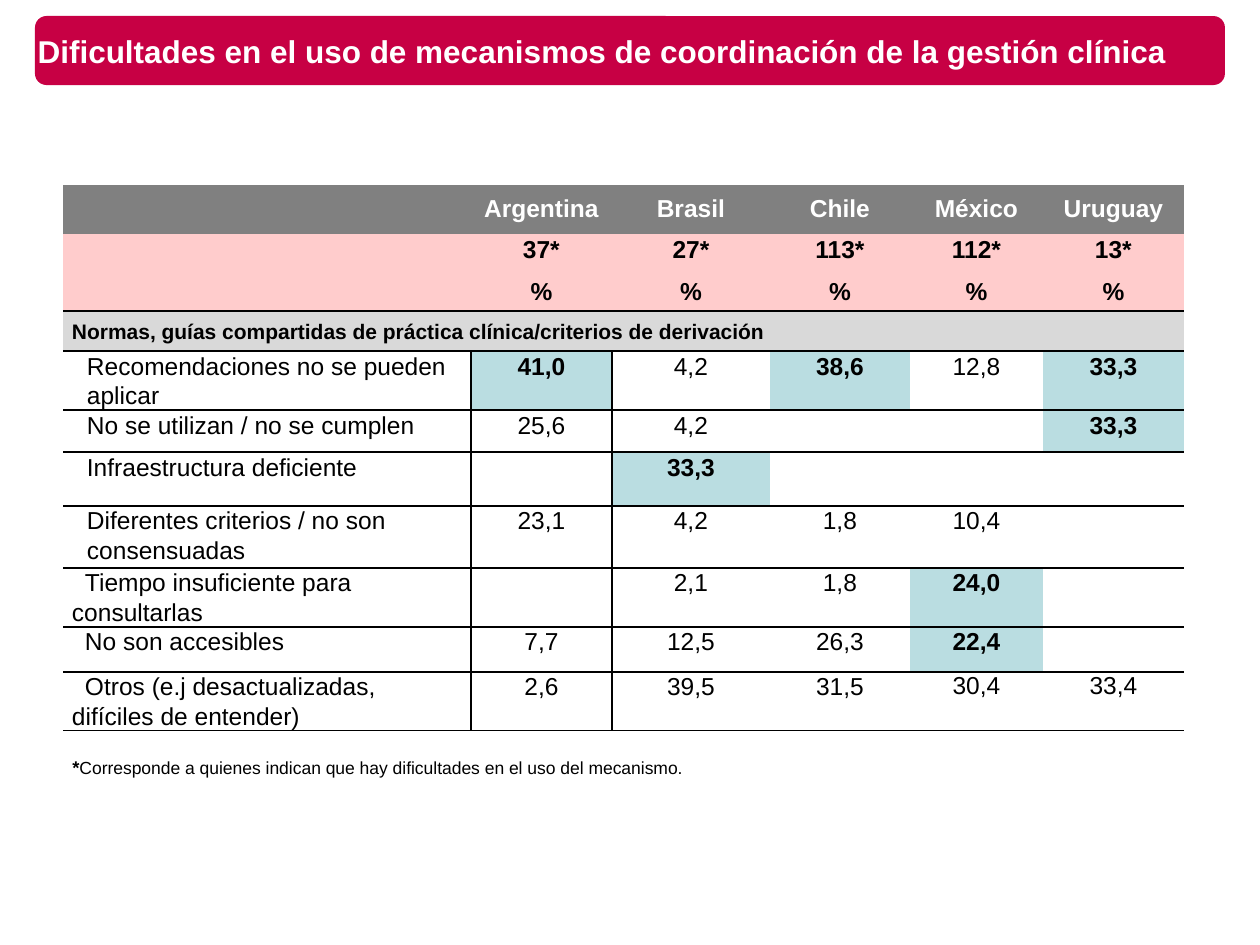
import pptx
import pptx.util
import pptx.dml.color
import pptx.enum.shapes
import pptx.enum.text
import pptx.oxml.ns
import lxml.etree

SCALE = 914400 // 126
BLACK, WHITE = "000000", "FFFFFF"
GRAY, PINK, SILVER, TEAL = "808080", "FFCCCC", "D9D9D9", "BADDE1"
LEFT = pptx.enum.text.PP_ALIGN.LEFT
CENTER = pptx.enum.text.PP_ALIGN.CENTER
TOP = pptx.enum.text.MSO_ANCHOR.TOP
MIDDLE = pptx.enum.text.MSO_ANCHOR.MIDDLE
PLAIN_STYLE = "{2D5ABB26-0587-4C30-8999-92F81FD0307C}"

COLUMN_WIDTHS = [408, 141, 158, 140, 133, 141]
ROW_HEIGHTS = [49, 38, 38, 40, 59, 42, 54, 62, 59, 45, 59]
COUNTRIES = ["", "Argentina", "Brasil", "Chile", "México", "Uruguay"]
COUNTS = ["", "37*", "27*", "113*", "112*", "13*"]
UNITS = [""] + ["%"] * 5
SECTION = "Normas, guías compartidas de práctica clínica/criterios de derivación"
HANGING, FIRST_LINE = (15, 0), (0, 13)
DIFFICULTIES = [
    ("Recomendaciones no se pueden aplicar", HANGING, ["41,0", "4,2", "38,6", "12,8", "33,3"]),
    ("No se utilizan / no se cumplen", HANGING, ["25,6", "4,2", "", "", "33,3"]),
    ("Infraestructura deficiente", HANGING, ["", "33,3", "", "", ""]),
    ("Diferentes criterios / no son consensuadas", HANGING, ["23,1", "4,2", "1,8", "10,4", ""]),
    ("Tiempo insuficiente para consultarlas", FIRST_LINE, ["", "2,1", "1,8", "24,0", ""]),
    ("No son accesibles", FIRST_LINE, ["7,7", "12,5", "26,3", "22,4", ""]),
    ("Otros (e.j desactualizadas,\vdifíciles de entender)", FIRST_LINE,
     ["2,6", "39,5", "31,5", "30,4", "33,4"]),
]
HIGHLIGHTS = {(0, 0), (0, 2), (0, 4), (1, 4), (2, 1), (4, 3), (5, 3)}
SINGLE_SPACED = {(6, 3), (6, 4)}


def px(length):
    return pptx.util.Emu(length * SCALE)


def color(value):
    return pptx.dml.color.RGBColor.from_string(value)


def write(para, text, size=14, bold=False, ink=BLACK, align=LEFT, spacing=1.0, indent=(0, 0)):
    para.text = text
    para.alignment = align
    para.line_spacing = spacing
    properties = para._p.get_or_add_pPr()
    properties.set("marL", str(px(indent[0])))
    properties.set("indent", str(px(indent[1])))
    for span in para.runs:
        span.font.name = "Arial"
        span.font.size = pptx.util.Pt(size)
        span.font.bold = bold
        span.font.color.rgb = color(ink)


def add_border(cell, side):
    line = lxml.etree.SubElement(
        cell._tc.get_or_add_tcPr(), pptx.oxml.ns.qn("a:" + side), w=str(pptx.util.Pt(1)))
    solid = lxml.etree.SubElement(line, pptx.oxml.ns.qn("a:solidFill"))
    lxml.etree.SubElement(solid, pptx.oxml.ns.qn("a:srgbClr"), val=BLACK)


def fill_cell(cell, text, fill=WHITE, anchor=TOP, borders=(), **style):
    cell.margin_left = cell.margin_right = px(9)
    cell.margin_top = cell.margin_bottom = 0
    cell.vertical_anchor = anchor
    for side in borders:
        add_border(cell, side)
    cell.fill.solid()
    cell.fill.fore_color.rgb = color(fill)
    write(cell.text_frame.paragraphs[0], text, **style)


def add_heading(page, left, top, width, height):
    bar = page.shapes.add_shape(
        pptx.enum.shapes.MSO_SHAPE.ROUNDED_RECTANGLE, px(left), px(top), px(width), px(height))
    bar.shadow.inherit = False
    bar.fill.solid()
    bar.fill.fore_color.rgb = color("C70044")
    bar.line.fill.background()

    title = page.shapes.title
    title.element.getparent().append(title.element)
    title.left, title.top = px(left - 10), px(top)
    title.width, title.height = px(width + 54), px(height)
    frame = title.text_frame
    frame.auto_size = pptx.enum.text.MSO_AUTO_SIZE.NONE
    frame.vertical_anchor = MIDDLE
    write(frame.paragraphs[0],
          "Dificultades en el uso de mecanismos de coordinación de la gestión clínica",
          size=18, bold=True, ink=WHITE)


def add_difficulties_table(page, left, top):
    frame = page.shapes.add_table(
        len(ROW_HEIGHTS), len(COLUMN_WIDTHS), px(left), px(top),
        px(sum(COLUMN_WIDTHS)), px(sum(ROW_HEIGHTS)))
    table = frame.table
    table.first_row = table.horz_banding = False
    table._tbl.tblPr.find(pptx.oxml.ns.qn("a:tableStyleId")).text = PLAIN_STYLE
    for column, width in zip(table.columns, COLUMN_WIDTHS):
        column.width = px(width)
    for row, height in zip(table.rows, ROW_HEIGHTS):
        row.height = px(height)

    headers = [
        (COUNTRIES, dict(fill=GRAY, ink=WHITE, anchor=MIDDLE)),
        (COUNTS, dict(fill=PINK, spacing=1.07)),
        (UNITS, dict(fill=PINK, anchor=MIDDLE, borders=["lnB"])),
    ]
    for row, (labels, style) in enumerate(headers):
        for column, label in enumerate(labels):
            fill_cell(table.cell(row, column), label, bold=True, align=CENTER, **style)

    section_row = len(headers)
    for column in range(len(COLUMN_WIDTHS)):
        fill_cell(table.cell(section_row, column), "" if column else SECTION, fill=SILVER,
                  anchor=MIDDLE, borders=["lnB"], size=12, bold=True, spacing=1.07)
    table.cell(section_row, 0).merge(table.cell(section_row, len(COLUMN_WIDTHS) - 1))

    for index, (label, indent, values) in enumerate(DIFFICULTIES):
        row = section_row + 1 + index
        fill_cell(table.cell(row, 0), label, borders=["lnR", "lnB"], spacing=1.07, indent=indent)
        for column, value in enumerate(values):
            marked = (index, column) in HIGHLIGHTS
            fill_cell(table.cell(row, column + 1), value, fill=TEAL if marked else WHITE,
                      bold=marked, align=CENTER,
                      borders=["lnB"] if column else ["lnL", "lnB"],
                      spacing=1.0 if (index, column) in SINGLE_SPACED else 1.07)


def add_footnote(page, left, top, width, height):
    box = page.shapes.add_textbox(px(left), px(top), px(width), px(height))
    frame = box.text_frame
    frame.word_wrap = True
    frame.vertical_anchor = MIDDLE
    para = frame.paragraphs[0]
    write(para, "*", size=10.5, bold=True)
    span = para.add_run()
    span.text = "Corresponde a quienes indican que hay dificultades en el uso del mecanismo."
    span.font.name = "Arial"
    span.font.size = pptx.util.Pt(10)
    span.font.color.rgb = color(BLACK)


def main():
    deck = pptx.Presentation()
    deck.slide_width, deck.slide_height = px(1260), px(945)
    page = deck.slides.add_slide(deck.slide_layouts[5])
    add_heading(page, 35, 16, 1190, 69)
    add_difficulties_table(page, 63, 185)
    add_footnote(page, 60, 745, 1200, 45)
    deck.save("out.pptx")


if __name__ == "__main__":
    main()
